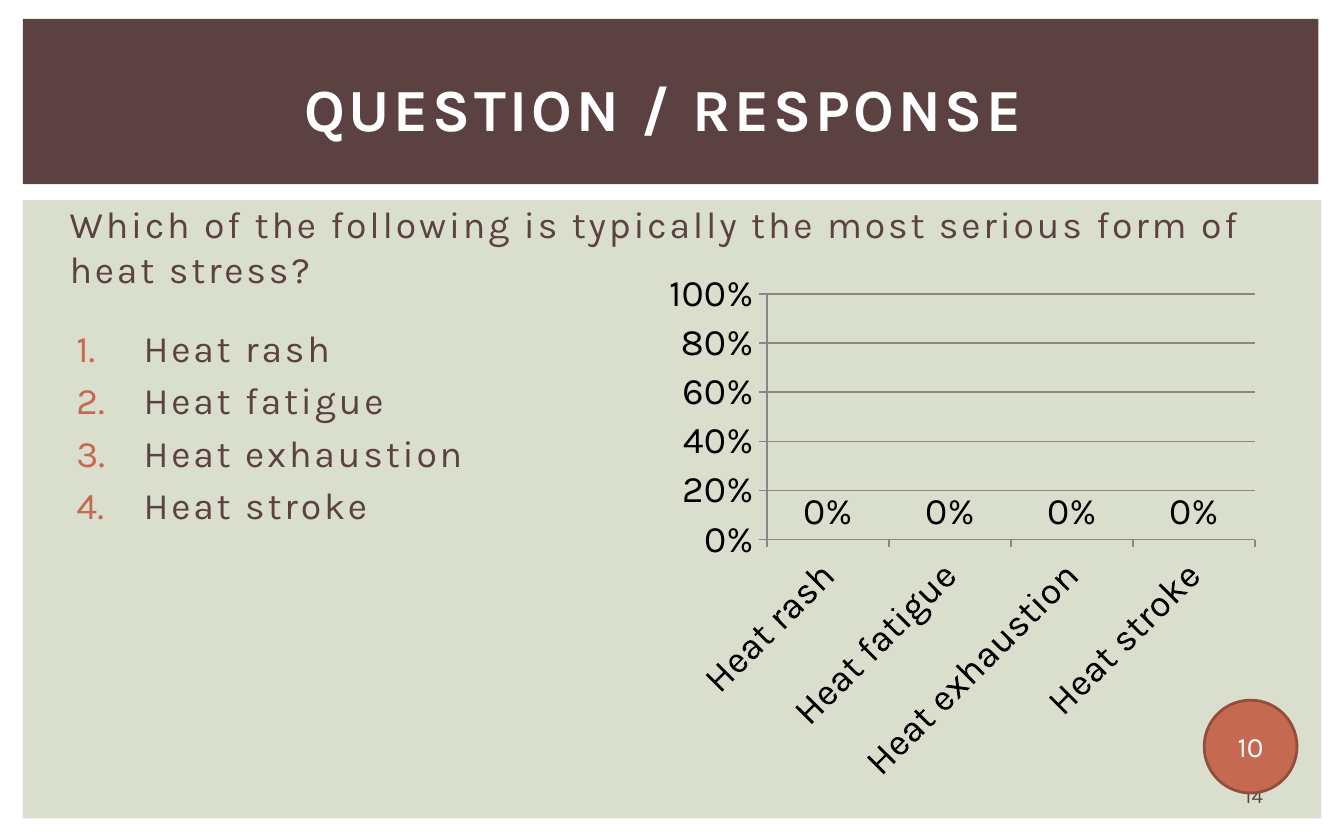
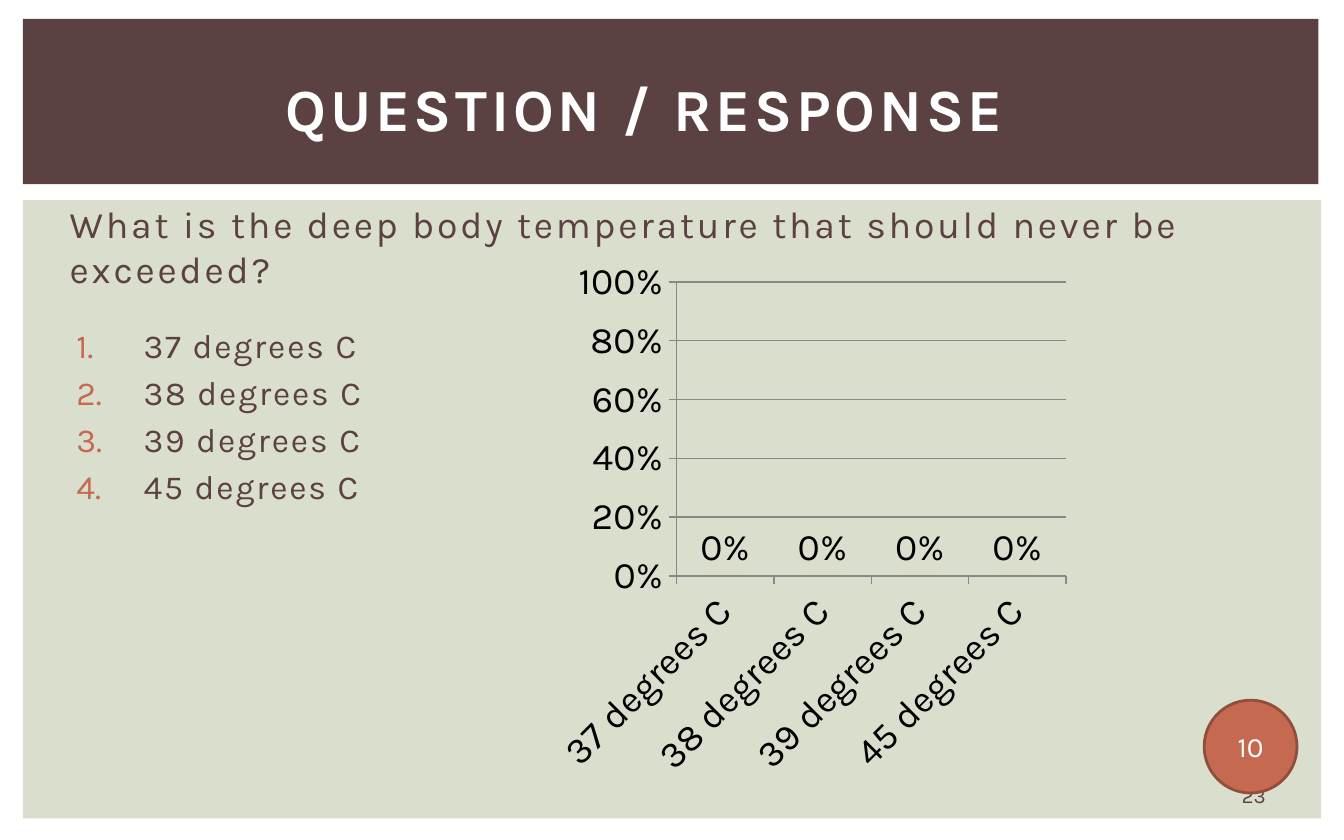
from pptx import Presentation
from pptx.chart.data import CategoryChartData
from pptx.dml.color import RGBColor
from pptx.enum.chart import XL_CHART_TYPE, XL_LABEL_POSITION, XL_TICK_MARK
from pptx.enum.shapes import MSO_SHAPE
from pptx.enum.text import MSO_ANCHOR, MSO_AUTO_SIZE, PP_ALIGN
from pptx.oxml import parse_xml
from pptx.oxml.ns import nsdecls, qn
from pptx.util import Pt

FONT = "Karla"
WHITE = RGBColor(0xFF, 0xFF, 0xFF)
BLACK = RGBColor(0x00, 0x00, 0x00)
BROWN = RGBColor(0x5B, 0x41, 0x41)
SAGE = RGBColor(0xDA, 0xDE, 0xCC)
RUST = RGBColor(0xC6, 0x69, 0x51)
DARK_RUST = RGBColor(0x92, 0x4E, 0x3C)
GREY = RGBColor(0x88, 0x88, 0x88)

RECTANGLE = MSO_SHAPE.RECTANGLE
OVAL = MSO_SHAPE.OVAL
COLUMNS = XL_CHART_TYPE.COLUMN_CLUSTERED
LABEL_ABOVE = XL_LABEL_POSITION.OUTSIDE_END
TICK_OUT = XL_TICK_MARK.OUTSIDE
TICK_NONE = XL_TICK_MARK.NONE
TOP, MIDDLE = MSO_ANCHOR.TOP, MSO_ANCHOR.MIDDLE
LEFT, CENTER = PP_ALIGN.LEFT, PP_ALIGN.CENTER
NO_FIT = MSO_AUTO_SIZE.NONE

# Boxes are left, top, width, height in points.
PANEL = (12.24, 107.28, 695.52, 331.2)
BAND = (12.24, 10.08, 694.08, 88.56)
TITLE = (30.24, 23.04, 660.24, 69.12)
QUESTION = (30.24, 104.4, 660.24, 54)
ANSWERS = (30.24, 170.64, 322.56, 231.12)
NUMBER = (648.72, 416.88, 46.08, 18)
BADGE = (645.12, 375.12, 49.68, 49.68)
SIDE_INSET = 7.2

SLIDES = [
    {
        "title_shift": 10,
        "number": "14",
        "question": "Which of the following is typically the most serious "
                    "form of heat stress?",
        "answers": ["Heat rash", "Heat fatigue", "Heat exhaustion", "Heat stroke"],
        "answer_size": 20,
        "answer_spacing": 1.5,
        "chart_box": (336.24, 145.44, 355.68, 289.44),
        "plot": (0.21, 0.039, 0.735, 0.456),
    },
    {
        "title_shift": 30,
        "number": "23",
        "question": "What is the deep body temperature that should never be "
                    "exceeded?",
        "answers": [f"{degrees} degrees C" for degrees in (37, 38, 39, 45)],
        "answer_size": 18,
        "answer_spacing": 1,
        "chart_box": (288, 135.36, 300.24, 290.16),
        "plot": (0.248, 0.054, 0.695, 0.543),
    },
]


def points(box):
    return [Pt(length) for length in box]


class QuizDeck:
    def __init__(self):
        self.deck = Presentation()
        self.deck.slide_width, self.deck.slide_height = Pt(720), Pt(450)
        self.slide = None

    def new_slide(self):
        self.slide = self.deck.slides.add_slide(self.deck.slide_layouts[5])

    def style(self, frame, size, color, align=LEFT, anchor=TOP, spacing=0, bold=False):
        frame.word_wrap = True
        frame.auto_size = NO_FIT
        frame.vertical_anchor = anchor
        for paragraph in frame.paragraphs:
            paragraph.alignment = align
            for span in paragraph.runs:
                span.font.name = FONT
                span.font.size = Pt(size)
                span.font.bold = bold
                span.font.color.rgb = color
                if spacing:
                    span.font._element.set("spc", str(int(spacing * 100)))

    def shape(self, kind, box, fill, line=None):
        shape = self.slide.shapes.add_shape(kind, *points(box))
        shape.shadow.inherit = False
        shape.fill.solid()
        shape.fill.fore_color.rgb = fill
        if line is None:
            shape.line.fill.background()
        else:
            shape.line.color.rgb = line
            shape.line.width = Pt(1.5)
        return shape

    def title(self, text, shift):
        """Place the title above the bands; shift narrows it from the right."""
        title = self.slide.shapes.title
        title._element.getparent().append(title._element)
        title.left, title.top, title.width, title.height = points(TITLE)
        frame = title.text_frame
        frame.text = text
        frame.margin_left = Pt(SIDE_INSET)
        frame.margin_right = Pt(SIDE_INSET + shift)
        self.style(frame, 32, WHITE, CENTER, MIDDLE, spacing=2, bold=True)

    def text(self, box, text, size, color, **style):
        frame = self.slide.shapes.add_textbox(*points(box)).text_frame
        frame.text = text
        self.style(frame, size, color, **style)
        return frame

    def numbered_list(self, box, items, size, spacing):
        frame = self.text(box, "\n".join(items), size, BROWN, spacing=spacing)
        for index, paragraph in enumerate(frame.paragraphs):
            if index:
                paragraph.space_before = Pt(size * 0.2)
            properties = paragraph._p.get_or_add_pPr()
            properties.set("marL", str(Pt(39.6)))
            properties.set("indent", str(-Pt(36)))
            for bullet in (
                f'<a:buClr {nsdecls("a")}><a:srgbClr val="{RUST}"/></a:buClr>',
                f'<a:buFont {nsdecls("a")} typeface="{FONT}"/>',
                f'<a:buAutoNum {nsdecls("a")} type="arabicPeriod"/>',
            ):
                properties.append(parse_xml(bullet))

    def badge(self, text):
        badge = self.shape(OVAL, BADGE, RUST, DARK_RUST)
        frame = badge.text_frame
        frame.text = text
        frame.margin_left = frame.margin_right = 0
        frame.margin_top = frame.margin_bottom = 0
        self.style(frame, 15, WHITE, CENTER, MIDDLE)
        frame.word_wrap = False

    def response_chart(self, box, categories, plot_area):
        data = CategoryChartData(number_format="0%")
        data.categories = categories
        data.add_series("Series 1", [0] * len(categories))
        chart = self.slide.shapes.add_chart(COLUMNS, *points(box), data).chart
        chart.has_legend = chart.has_title = False
        chart.font.name = FONT
        chart.font.size = Pt(20)
        chart.font.color.rgb = BLACK

        plot = chart.plots[0]
        plot.gap_width = 150
        plot.vary_by_categories = False
        fill = plot.series[0].format.fill
        fill.solid()
        fill.fore_color.rgb = RUST
        plot.has_data_labels = True
        labels = plot.data_labels
        labels.show_value = True
        labels.number_format = "0%"
        labels.number_format_is_linked = False
        labels.position = LABEL_ABOVE

        for axis in (chart.category_axis, chart.value_axis):
            axis.major_tick_mark = TICK_OUT
            axis.minor_tick_mark = TICK_NONE
            axis.format.line.color.rgb = GREY
            axis.tick_labels.font.size = Pt(20)
        text_body = chart.category_axis._element.find(qn("c:txPr"))
        text_body.find(qn("a:bodyPr")).set("rot", "-2700000")
        value_axis = chart.value_axis
        value_axis.minimum_scale, value_axis.maximum_scale = 0, 1
        value_axis.major_unit = 0.2
        value_axis.has_major_gridlines = True
        value_axis.major_gridlines.format.line.color.rgb = GREY
        value_axis.tick_labels.number_format = "0%"
        value_axis.tick_labels.number_format_is_linked = False
        self.place_plot(chart, plot_area)

    def place_plot(self, chart, plot_area):
        """Fix the inner plot area as fractions of the chart."""
        area = chart._chartSpace.chart.plotArea
        for layout in area.findall(qn("c:layout")):
            area.remove(layout)
        sizes = "".join(
            f'<c:{name} val="{value}"/>' for name, value in zip("xywh", plot_area)
        )
        area.insert(0, parse_xml(
            f'<c:layout {nsdecls("c")}><c:manualLayout>'
            '<c:layoutTarget val="inner"/>'
            '<c:xMode val="edge"/><c:yMode val="edge"/>'
            f"{sizes}</c:manualLayout></c:layout>"
        ))

    def question_slide(self, content):
        self.new_slide()
        self.shape(RECTANGLE, PANEL, SAGE)
        self.shape(RECTANGLE, BAND, BROWN)
        self.title("QUESTION / RESPONSE", content["title_shift"])
        self.text(NUMBER, content["number"], 11, BROWN, align=CENTER, anchor=MIDDLE)
        self.text(QUESTION, content["question"], 20, BROWN, spacing=1.5)
        self.numbered_list(ANSWERS, content["answers"], content["answer_size"],
                           content["answer_spacing"])
        self.response_chart(content["chart_box"], content["answers"], content["plot"])
        self.badge("10")


def main():
    quiz = QuizDeck()
    for content in SLIDES:
        quiz.question_slide(content)
    quiz.deck.save("out.pptx")


if __name__ == "__main__":
    main()
